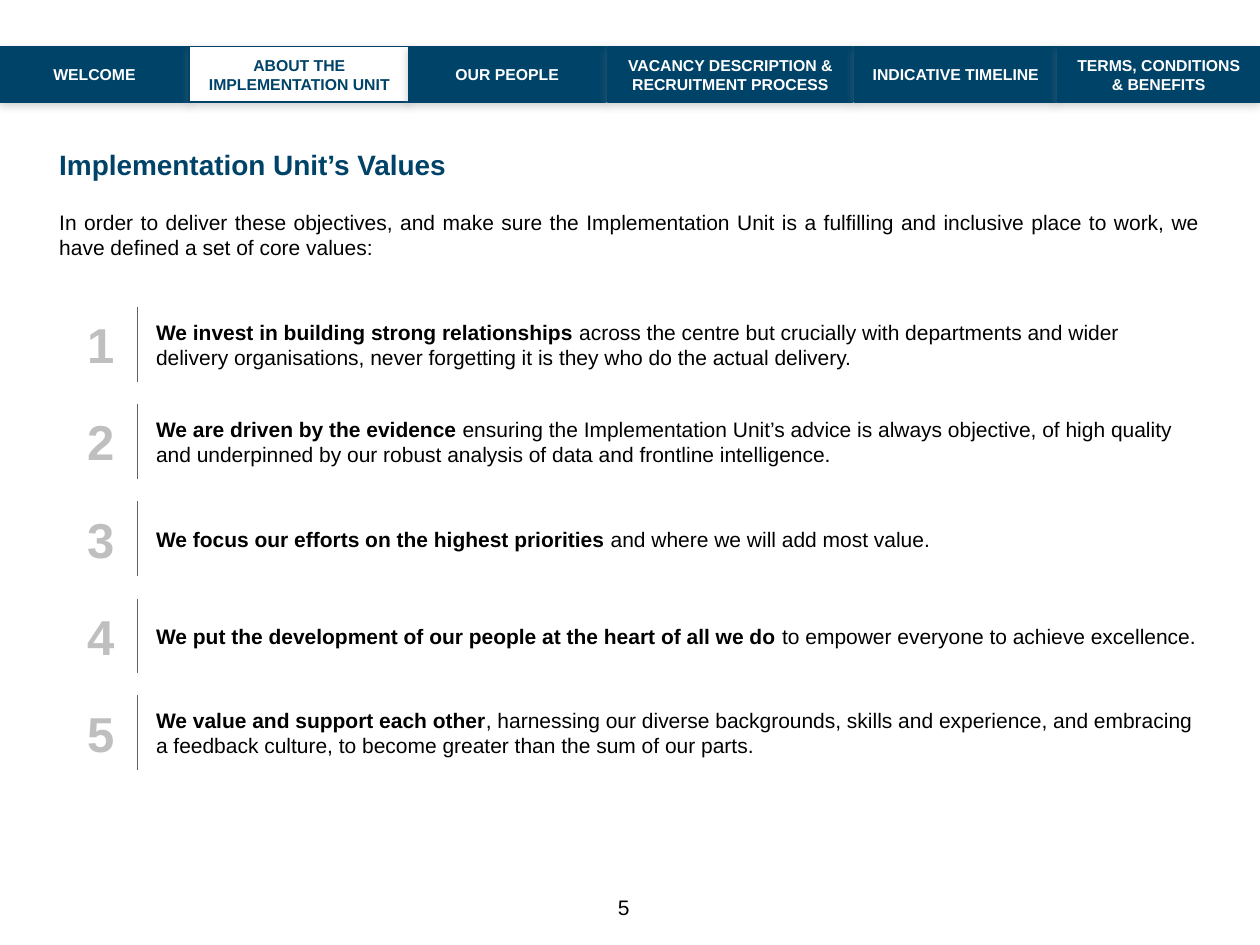
"""Build the Implementation Unit values slide with its navigation tabs."""
from dataclasses import dataclass

from lxml import etree
from pptx import Presentation
from pptx.dml.color import RGBColor
from pptx.enum.shapes import MSO_CONNECTOR, MSO_SHAPE
from pptx.enum.text import MSO_ANCHOR, MSO_AUTO_SIZE, PP_ALIGN
from pptx.oxml import parse_xml
from pptx.oxml.ns import nsdecls, qn
from pptx.util import Inches, Pt

NAVY = RGBColor(0x00, 0x43, 0x68)
WHITE = RGBColor(0xFF, 0xFF, 0xFF)
BLACK = RGBColor(0x00, 0x00, 0x00)
SILVER = RGBColor(0xBF, 0xBF, 0xBF)
GREY = RGBColor(0x60, 0x60, 0x60)

LEFT, CENTER, JUSTIFY = PP_ALIGN.LEFT, PP_ALIGN.CENTER, PP_ALIGN.JUSTIFY
TOP, MIDDLE = MSO_ANCHOR.TOP, MSO_ANCHOR.MIDDLE
RECT, STRAIGHT = MSO_SHAPE.RECTANGLE, MSO_CONNECTOR.STRAIGHT
NO_FIT = MSO_AUTO_SIZE.NONE

TAB_TOP, TAB_HEIGHT = 0.37, 0.44
ROW_TOP, ROW_PITCH, ROW_HEIGHT = 2.44, 0.77, 0.59
RULE_X = 1.09
TAB_SHADOW = (
    f'<a:outerShdw {nsdecls("a")} blurRad="63500" dist="22860" dir="5400000" '
    'rotWithShape="0"><a:srgbClr val="808080"><a:alpha val="35000"/>'
    '</a:srgbClr></a:outerShdw>'
)


@dataclass
class Tab:
    label: str
    left: float
    width: float
    active: bool = False


@dataclass
class Value:
    lead: str
    rest: str


TABS = [
    Tab("WELCOME", 0, 1.5),
    Tab("ABOUT THE IMPLEMENTATION UNIT", 1.5, 1.75, True),
    Tab("OUR PEOPLE", 3.24, 1.57),
    Tab("VACANCY DESCRIPTION & RECRUITMENT PROCESS", 4.82, 1.95),
    Tab("INDICATIVE TIMELINE", 6.78, 1.61),
    Tab("TERMS, CONDITIONS & BENEFITS", 8.39, 1.61),
]
VALUES = [
    Value("We invest in building strong relationships ",
          "across the centre but crucially with departments and wider delivery "
          "organisations, never forgetting it is they who do the actual delivery."),
    Value("We are driven by the evidence ",
          "ensuring the Implementation Unit’s advice is always objective, of high "
          "quality and underpinned by our robust analysis of data and frontline "
          "intelligence."),
    Value("We focus our efforts on the highest priorities ",
          "and where we will add most value."),
    Value("We put the development of our people at the heart of all we do",
          " to empower everyone to achieve excellence."),
    Value("We value and support each other",
          ", harnessing our diverse backgrounds, skills and experience, and embracing "
          "a feedback culture, to become greater than the sum of our parts."),
]


def place(sp, left: float, top: float, width: float, height: float) -> None:
    """Move and size a shape in inches."""
    box = {"left": left, "top": top, "width": width, "height": height}
    for name, length in box.items():
        setattr(sp, name, Inches(length))


def format_frame(tf, anchor, margins=(0, 0, 0, 0), wrap: bool = True) -> None:
    """Set the anchor, wrapping and margins (left, top, right, bottom)."""
    sides = ("margin_left", "margin_top", "margin_right", "margin_bottom")
    props = {"auto_size": NO_FIT, "word_wrap": wrap, "vertical_anchor": anchor}
    props.update(zip(sides, map(Inches, margins)))
    for name, setting in props.items():
        setattr(tf, name, setting)


def add_run(p, text: str, size: float, color: RGBColor, bold: bool = False) -> None:
    """Add a formatted run to a paragraph."""
    r = p.add_run()
    r.text = text
    for name, setting in {"name": "Arial", "size": Pt(size), "bold": bold}.items():
        setattr(r.font, name, setting)
    r.font.color.rgb = color


def write(sp, text: str, size: float, color: RGBColor, align, bold: bool = False):
    """Fill the first paragraph of a shape and return it."""
    p = sp.text_frame.paragraphs[0]
    p.alignment = align
    add_run(p, text, size, color, bold)
    return p


def add_tab(slide, tab: Tab) -> None:
    """Draw one navigation tab."""
    sp = slide.shapes.add_shape(RECT, Inches(tab.left), Inches(TAB_TOP),
                                Inches(tab.width), Inches(TAB_HEIGHT))
    fill, ink = (WHITE, NAVY) if tab.active else (NAVY, WHITE)
    sp.fill.solid()
    sp.fill.fore_color.rgb = fill
    sp.line.color.rgb = NAVY
    sp.line.width = Pt(0.75)
    sp.shadow.inherit = False
    sp.element.spPr.find(qn("a:effectLst")).append(parse_xml(TAB_SHADOW))
    format_frame(sp.text_frame, MIDDLE, (0.1, 0.05, 0.1, 0.05))
    write(sp, tab.label, 9, ink, CENTER, True)


def add_textbox(slide, left: float, top: float, width: float, height: float):
    """Add an empty text box measured in inches."""
    return slide.shapes.add_textbox(*map(Inches, (left, top, width, height)))


def add_value(slide, number: int, value: Value) -> None:
    """Draw one numbered value with its vertical rule."""
    top = ROW_TOP + (number - 1) * ROW_PITCH
    sp = add_textbox(slide, 0.69, top + 0.06, 0.22, 0.47)
    format_frame(sp.text_frame, TOP, wrap=False)
    write(sp, str(number), 28, SILVER, CENTER, True)

    rule = slide.shapes.add_connector(STRAIGHT, Inches(RULE_X), Inches(top),
                                      Inches(RULE_X), Inches(top + ROW_HEIGHT))
    rule.line.color.rgb = GREY
    rule.line.width = Pt(0.75)
    etree.SubElement(rule.element.spPr, qn("a:effectLst"))

    sp = add_textbox(slide, 1.14, top, 8.46, ROW_HEIGHT)
    format_frame(sp.text_frame, MIDDLE, (0.1, 0.05, 0.1, 0.05))
    p = write(sp, value.lead, 12, BLACK, LEFT, True)
    add_run(p, value.rest, 12, BLACK)


def main() -> None:
    """Assemble and save the slide."""
    prs = Presentation()
    prs.slide_width, prs.slide_height = Inches(10), Inches(7.5)
    slide = prs.slides.add_slide(prs.slide_layouts[1])

    title, body = slide.placeholders
    place(title, 0.47, 1.12, 9.06, 0.37)
    format_frame(title.text_frame, MIDDLE)
    write(title, "Implementation Unit’s Values", 16, NAVY, LEFT, True)

    place(body, 0.47, 1.66, 9.06, 5.63)
    format_frame(body.text_frame, TOP)
    p = write(body, "In order to deliver these objectives, and make sure the "
              "Implementation Unit is a fulfilling and inclusive place to work, "
              "we have defined a set of core values:", 12, BLACK, JUSTIFY)
    p.space_before = Pt(0)
    pPr = p._p.get_or_add_pPr()
    pPr.set("marL", "0")
    pPr.set("indent", "0")
    etree.SubElement(pPr, qn("a:buNone"))

    for number, value in enumerate(VALUES, 1):
        add_value(slide, number, value)
    for tab in TABS:
        add_tab(slide, tab)

    sp = add_textbox(slide, 0, 6.9, 10, 0.6)
    format_frame(sp.text_frame, MIDDLE, (0, 0, 0.1, 0))
    write(sp, "5", 12, BLACK, CENTER)

    prs.save("out.pptx")


if __name__ == "__main__":
    main()
